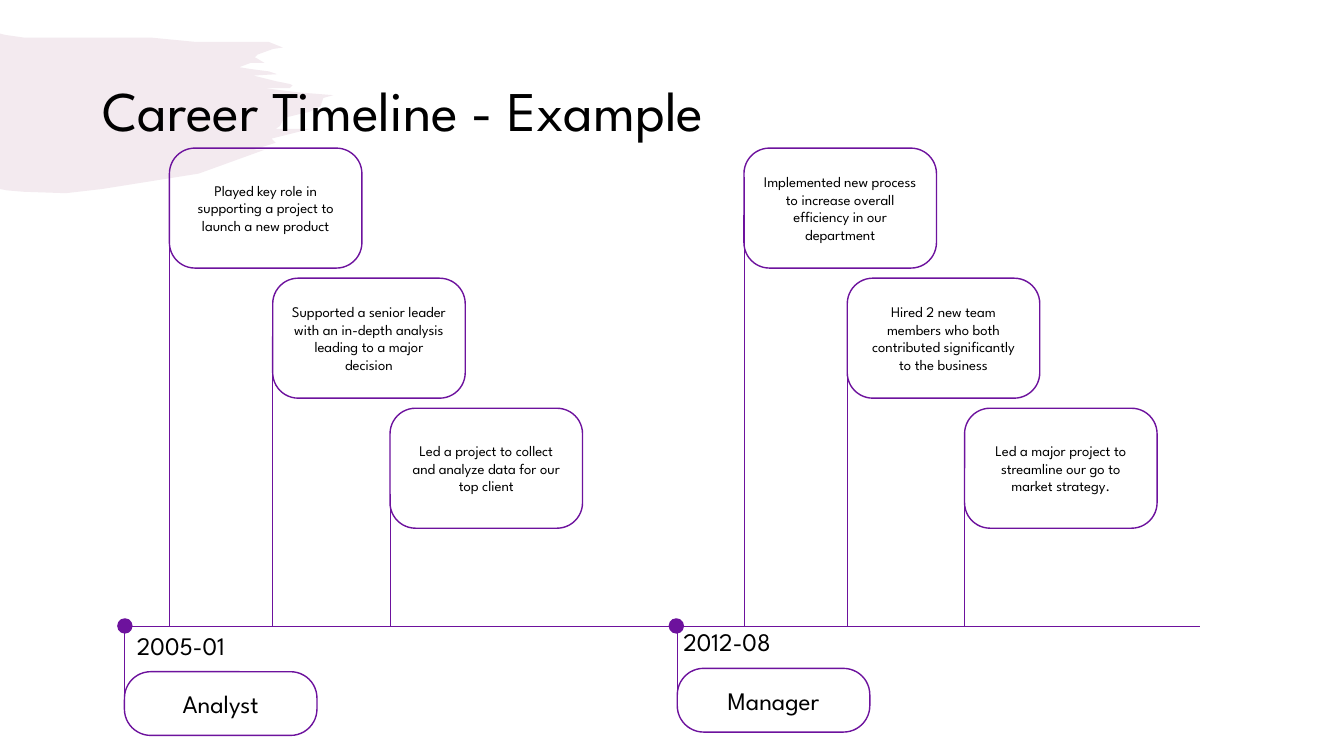
import pptx
import pptx.util
import pptx.dml.color
import pptx.enum.shapes
import pptx.enum.text
import pptx.oxml
import pptx.oxml.ns
import lxml.etree

Pt = pptx.util.Pt
SHAPE = pptx.enum.shapes.MSO_SHAPE
ANCHOR = pptx.enum.text.MSO_ANCHOR
ALIGN = pptx.enum.text.PP_ALIGN
qn = pptx.oxml.ns.qn
PURPLE = "6D129D"
AXIS_Y = 447.1


def rgb(color):
    return pptx.dml.color.RGBColor.from_string(color)


def write(s, text, size, align=ALIGN.LEFT, anchor=ANCHOR.TOP, wrap=True):
    tf = s.text_frame
    tf.text = text
    tf.word_wrap = wrap
    tf.vertical_anchor = anchor
    p = tf.paragraphs[0]
    p.alignment = align
    font = p.runs[0].font
    font.name = "League Spartan"
    font.size = Pt(size)
    font.color.rgb = rgb("000000")
    return p


prs = pptx.Presentation()
prs.slide_width = Pt(960)
prs.slide_height = Pt(540)
slide = prs.slides.add_slide(prs.slide_layouts[6])
shapes = slide.shapes

# Brush stroke behind the title
brush = [
    (0, 24.5), (4.3, 25.2), (18, 26.6), (47.5, 27.4), (73.4, 26.6),
    (108.7, 27.4), (139.7, 29.5), (178.6, 29.5), (192, 30), (201.6, 33.8),
    (195.1, 35.3), (183.6, 38.9), (182.2, 41), (184.3, 42.5), (188.6, 44.6),
    (179, 45), (171.4, 47.5), (177.1, 49), (184.3, 50.4), (191.5, 51.1),
    (198, 53.3), (180.7, 54), (189.4, 56.2), (196.6, 58.3), (201.6, 59),
    (207.4, 59.8), (208.8, 61.2), (206.6, 63.4), (204.5, 63.4), (189.4, 63.4),
    (213, 66.5), (237.6, 67.7), (231.1, 69.8), (229, 76.3), (221, 79.9),
    (216, 81.4), (203.8, 83.5), (201.6, 86.4), (200.2, 90), (197.3, 92.2),
    (221.8, 92.2), (193.7, 99.4), (196.6, 102.2), (181.4, 106.6),
    (189.4, 106.6), (141.8, 123.8), (73.4, 135.4), (46.8, 137.5),
    (16.6, 136.8), (5, 136.1), (0, 135.4),
]
builder = shapes.build_freeform(*brush[0], scale=Pt(1))
builder.add_line_segments(brush[1:], close=True)
s = builder.convert_to_shape()
s.shadow.inherit = False
s.line.fill.background()
s.fill.solid()
s.fill.fore_color.rgb = rgb("C696B1")
fill_color = s.fill._xPr.find(qn("a:solidFill"))[0]
lxml.etree.SubElement(fill_color, qn("a:alpha")).set("val", "20000")

title = shapes.add_textbox(Pt(66.2), Pt(28.8), Pt(828), Pt(104.4))
p = write(title, "Career Timeline - Example", 40, anchor=ANCHOR.MIDDLE)
p.line_spacing = 0.9

# Role: text, date, dot left, box left, box top, date left, date top
roles = [
    ("Analyst", "2005-01", 84.2, 88.9, 479.8, 90.7, 446.4),
    ("Manager", "2012-08", 478.1, 483.8, 477.4, 481, 444.2),
]
# Milestones of each role, stepping down to the right
milestones = [
    (121, ["Played key role in supporting a project to launch a new product",
           "Supported a senior leader with an in-depth analysis leading to a major decision",
           "Led a project to collect and analyze data for our top client"]),
    (531.4, ["Implemented new process to increase overall efficiency in our department",
             "Hired 2 new team members who both contributed significantly to the business",
             "Led a major project to streamline our go to market strategy."]),
]
steps = [(0, 126.7), (73.8, 217.4), (157.6, 352.8)]  # shift right, stem top

lines = [(84.2, AXIS_Y, 856.8, AXIS_Y)]
boxes = []  # left, top, height, corner, text, size
for role, date, dot_x, x, y, date_x, date_y in roles:
    lines.append((x, y + 27.2, x, AXIS_Y + 5))
    boxes.append((x, y, 45.5, 0.413, role, 18))
for left, texts in milestones:
    for i, (text, (shift, stem_top)) in enumerate(zip(texts, steps)):
        x = left + shift
        lines.append((x, AXIS_Y, x, stem_top))
        boxes.append((x, 105.8 + 92.9 * i, 85.7, 0.213, text, 10.5))

for ends in lines:
    s = shapes.add_connector(pptx.enum.shapes.MSO_CONNECTOR.STRAIGHT,
                             *[Pt(v) for v in ends])
    s.line.color.rgb = rgb(PURPLE)
    s.line.width = Pt(0.5)
    lxml.etree.SubElement(s._element.spPr, qn("a:effectLst"))

for x, y, height, corner, text, size in boxes:
    s = shapes.add_shape(SHAPE.ROUNDED_RECTANGLE, Pt(x), Pt(y), Pt(137.5), Pt(height))
    s.adjustments[0] = corner
    s.shadow.inherit = False
    s.fill.background()
    s.line.color.rgb = rgb(PURPLE)
    s.line.width = Pt(1)
    write(s, text, size, ALIGN.CENTER, ANCHOR.MIDDLE)

for role, date, dot_x, x, y, date_x, date_y in roles:
    s = shapes.add_shape(SHAPE.OVAL, Pt(dot_x), Pt(AXIS_Y - 5), Pt(10), Pt(10))
    s.shadow.inherit = False
    s.fill.solid()
    s.fill.fore_color.rgb = rgb(PURPLE)
    s.line.color.rgb = rgb(PURPLE)
    s.line.width = Pt(1)
    s = shapes.add_textbox(Pt(date_x), Pt(date_y), Pt(81.4), Pt(28.8))
    write(s, date, 18, wrap=False)

prs.save("out.pptx")
